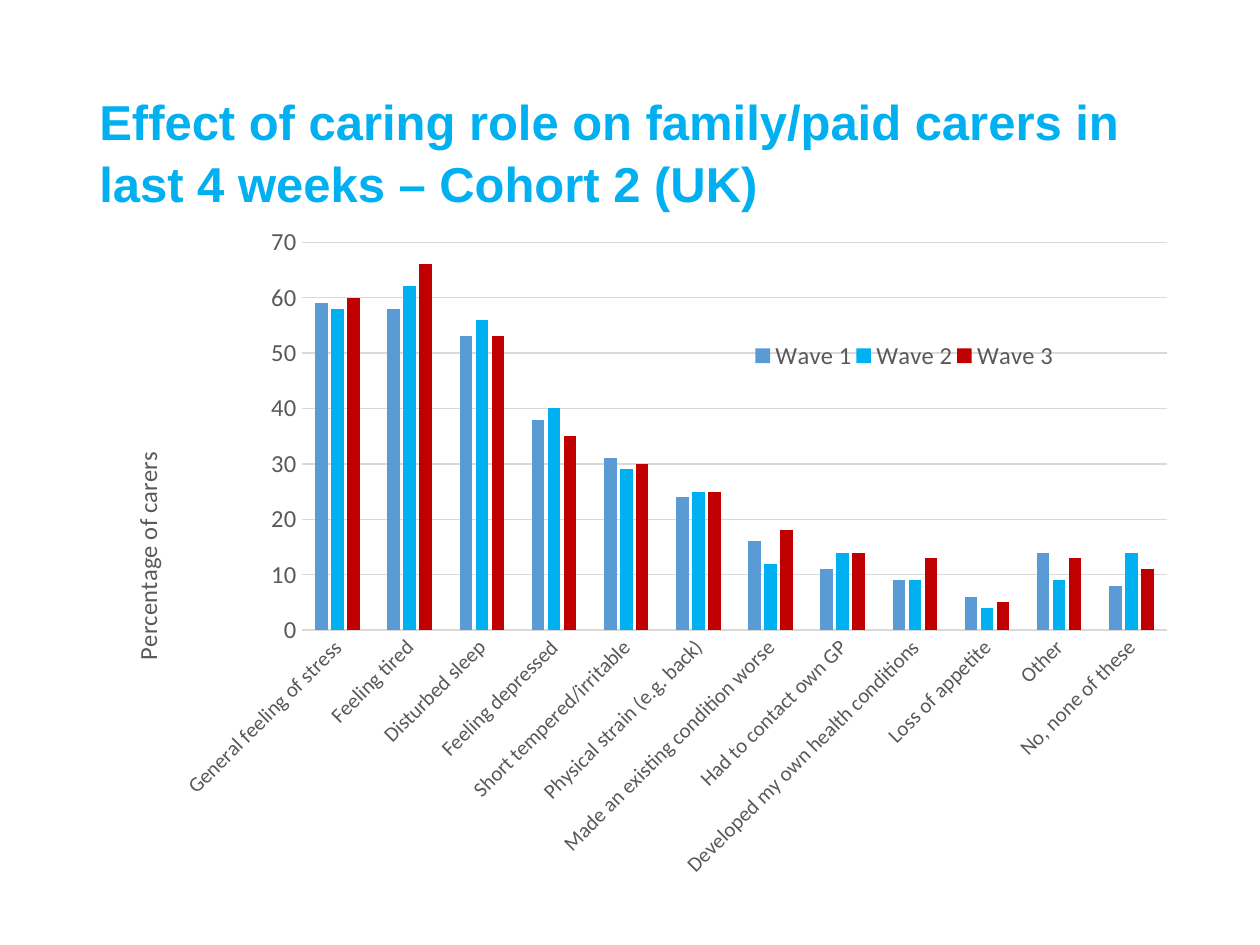
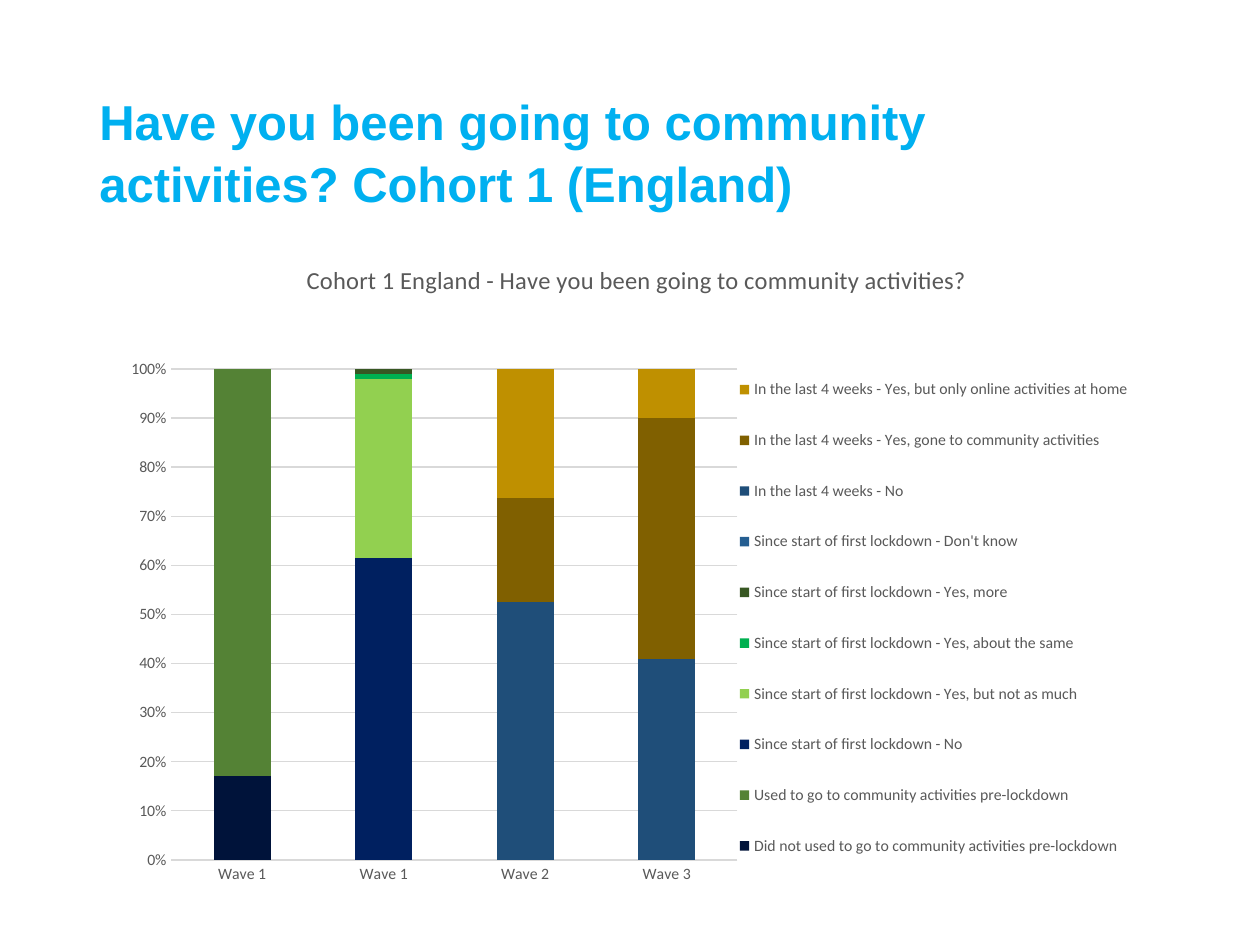
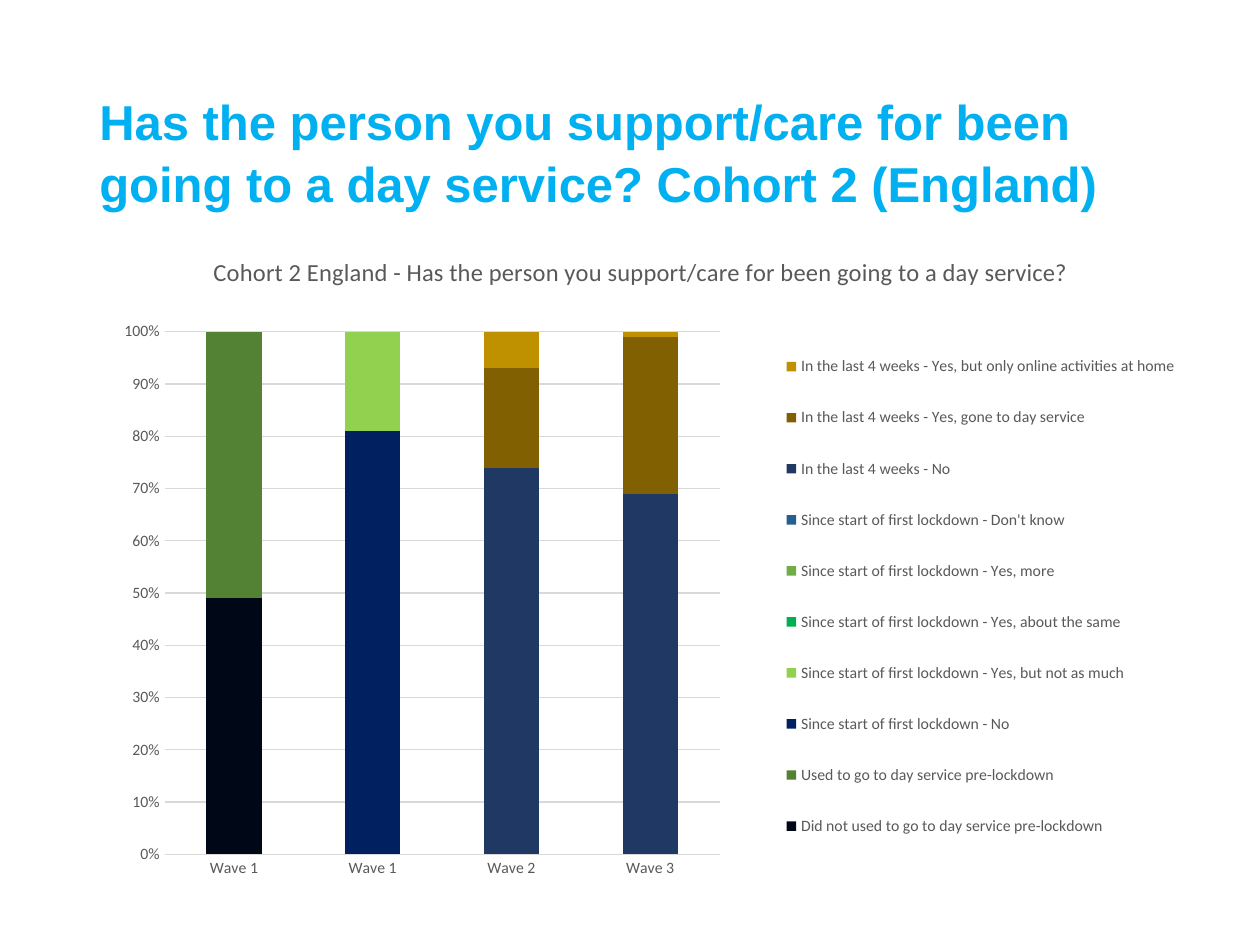
from dataclasses import dataclass

from lxml import etree
from pptx import Presentation
from pptx.chart.data import CategoryChartData
from pptx.dml.color import RGBColor
from pptx.enum.chart import XL_CHART_TYPE, XL_LEGEND_POSITION, XL_TICK_MARK
from pptx.enum.text import MSO_ANCHOR
from pptx.oxml.ns import qn
from pptx.util import Inches, Pt

CLUSTERED = XL_CHART_TYPE.COLUMN_CLUSTERED
STACKED = XL_CHART_TYPE.COLUMN_STACKED_100
BOTTOM, RIGHT = XL_LEGEND_POSITION.BOTTOM, XL_LEGEND_POSITION.RIGHT
NO_TICK = XL_TICK_MARK.NONE
MIDDLE = MSO_ANCHOR.MIDDLE


@dataclass(frozen=True)
class Theme:
    heading: str = "00B0F0"
    label: str = "595959"
    rule: str = "D9D9D9"
    heading_font: str = "Arial"
    chart_font: str = "Calibri"
    heading_size: int = 28
    chart_title_size: int = 14
    rule_width: float = 0.75


THEME = Theme()
HEADING_PLACE = (0.69, 0.44, 8.29, 1.51)

WAVES = ["Wave 1", "Wave 2", "Wave 3"]
EFFECTS = [
    ("General feeling of stress", 59, 58, 60),
    ("Feeling tired", 58, 62, 66),
    ("Disturbed sleep", 53, 56, 53),
    ("Feeling depressed", 38, 40, 35),
    ("Short tempered/irritable", 31, 29, 30),
    ("Physical strain (e.g. back)", 24, 25, 25),
    ("Made an existing condition worse", 16, 12, 18),
    ("Had to contact own GP", 11, 14, 14),
    ("Developed my own health conditions", 9, 9, 13),
    ("Loss of appetite", 6, 4, 5),
    ("Other", 14, 9, 13),
    ("No, none of these", 8, 14, 11),
]
WAVE_COLORS = ["5B9BD5", "00B0F0", "C00000"]

# Each period: its wording and the columns it fills
BEFORE = ("{} pre-lockdown", [0])
LOCKDOWN = ("Since start of first lockdown - {}", [1])
RECENT = ("In the last 4 weeks - {}", [2, 3])
ATTENDANCE_COLUMNS = ["Wave 1", "Wave 1", "Wave 2", "Wave 3"]


def attendance_series(activity, rows):
    """Name each answer and place its values in the columns of its period."""
    answers = [
        (BEFORE, f"Did not used to go to {activity}"),
        (BEFORE, f"Used to go to {activity}"),
        (LOCKDOWN, "No"),
        (LOCKDOWN, "Yes, but not as much"),
        (LOCKDOWN, "Yes, about the same"),
        (LOCKDOWN, "Yes, more"),
        (LOCKDOWN, "Don't know"),
        (RECENT, "No"),
        (RECENT, f"Yes, gone to {activity}"),
        (RECENT, "Yes, but only online activities at home"),
    ]
    series = []
    for ((wording, columns), answer), (color, *shares) in zip(answers, rows):
        filled = dict(zip(columns, shares))
        values = [filled.get(i) for i in range(len(ATTENDANCE_COLUMNS))]
        series.append((wording.format(answer), values, color))
    return series


STACKED_STYLE = dict(
    kind=STACKED, categories=ATTENDANCE_COLUMNS, gap=150, overlap=100,
    legend=RIGHT, sizes=(9, 9, 9), number_format="0%", top=1, step=0.1,
)

# Layout boxes are fractions of the chart: left, top, width, height
SLIDES = [
    dict(
        heading="Effect of caring role on family/paid carers in last 4 weeks – Cohort 2 (UK)",
        place=(0.74, 1.69, 8.7, 5.81),
        kind=CLUSTERED, categories=[row[0] for row in EFFECTS],
        series=[(wave, [row[i] for row in EFFECTS], color)
                for i, (wave, color) in enumerate(zip(WAVES, WAVE_COLORS), 1)],
        gap=219, overlap=-27, legend=BOTTOM, sizes=(12, 14, 14),
        number_format="General", top=70, step=10, label_angle=-45,
        value_title="Percentage of carers", value_title_box=(0.03, 0.32),
        plot_box=(0.19, 0.04, 0.79, 0.53),
        legend_box=(0.6, 0.17, 0.28, 0.05),
    ),
    dict(
        STACKED_STYLE,
        heading="Have you been going to community activities? Cohort 1 (England)",
        place=(0.67, 1.83, 8.64, 5.49),
        title="Cohort 1 England - Have you been going to community activities?",
        title_box=(0.2, 0.04),
        series=attendance_series("community activities", [
            ("00133A", 17), ("548235", 83), ("002060", 62), ("92D050", 37),
            ("00B050", 1), ("385723", 1), ("255E91", 0),
            ("1F4E79", 52, 41), ("806000", 21, 49), ("BF9000", 26, 10),
        ]),
        plot_box=(0.08, 0.2, 0.52, 0.71),
        legend_box=(0.6, 0.17, 0.36, 0.78),
    ),
    dict(
        STACKED_STYLE,
        heading="Has the person you support/care for been going to a day service? Cohort 2 (England)",
        place=(0.69, 1.77, 8.81, 5.39),
        title="Cohort 2 England - Has the person you support/care for been going to a day service?",
        title_box=(0.11, 0.04),
        series=attendance_series("day service", [
            ("000818", 49), ("548235", 51), ("002060", 81), ("92D050", 19),
            ("00B050", 0), ("70AD47", 0), ("255E91", 0),
            ("203864", 74, 69), ("806000", 19, 30), ("BF9000", 7, 1),
        ]),
        plot_box=(0.07, 0.16, 0.5, 0.77),
        legend_box=(0.62, 0.15, 0.37, 0.8),
    ),
]


def rgb(color):
    return RGBColor.from_string(color)


def style_font(font, size, color=THEME.label, name=THEME.chart_font, bold=False):
    font.size, font.name, font.bold = Pt(size), name, bold
    font.color.rgb = rgb(color)


def style_line(line):
    line.color.rgb = rgb(THEME.rule)
    line.width = Pt(THEME.rule_width)


def set_layout(element, box, index):
    """Pin a chart part to a box, adding its layout at the given child index."""
    layout = element.find(qn("c:layout"))
    if layout is None:
        layout = etree.Element(qn("c:layout"))
        element.insert(index, layout)
    manual = etree.SubElement(layout, qn("c:manualLayout"))
    if element.tag == qn("c:plotArea"):
        etree.SubElement(manual, qn("c:layoutTarget")).set("val", "inner")
    for side in ("xMode", "yMode"):
        etree.SubElement(manual, qn(f"c:{side}")).set("val", "edge")
    for side, share in zip("xywh", box):
        etree.SubElement(manual, qn(f"c:{side}")).set("val", str(share))


def add_heading(page, words):
    box = page.shapes.add_textbox(*map(Inches, HEADING_PLACE))
    frame = box.text_frame
    frame.word_wrap = True
    frame.vertical_anchor = MIDDLE
    frame.text = words
    para = frame.paragraphs[0]
    para.line_spacing = 1.05
    style_font(para.runs[0].font, THEME.heading_size, THEME.heading,
               THEME.heading_font, True)


def write_title(title, words, box):
    title.text_frame.text = words
    span = title.text_frame.paragraphs[0].runs[0]
    style_font(span.font, THEME.chart_title_size)
    set_layout(title._element, box, 1)


def style_axes(chart, content):
    category, value = chart.category_axis, chart.value_axis
    for axis, size in zip((category, value), content["sizes"]):
        axis.major_tick_mark = axis.minor_tick_mark = NO_TICK
        style_font(axis.tick_labels.font, size)
    style_line(category.format.line)
    value.format.line.fill.background()
    value.has_major_gridlines = True
    style_line(value.major_gridlines.format.line)
    value.minimum_scale, value.maximum_scale = 0, content["top"]
    value.major_unit = content["step"]
    value.tick_labels.number_format = content["number_format"]
    value.tick_labels.number_format_is_linked = False
    if "label_angle" in content:
        body = category._element.find(qn("c:txPr")).find(qn("a:bodyPr"))
        body.set("rot", str(content["label_angle"] * 60000))
    if "value_title" in content:
        write_title(value.axis_title, content["value_title"], content["value_title_box"])


def add_column_chart(page, content):
    data = CategoryChartData()
    data.categories = content["categories"]
    for name, values, _ in content["series"]:
        data.add_series(name, values)
    place = map(Inches, content["place"])
    chart = page.shapes.add_chart(content["kind"], *place, data).chart
    style_font(chart.font, content["sizes"][-1])

    chart.has_title = "title" in content
    if chart.has_title:
        write_title(chart.chart_title, content["title"], content["title_box"])

    plot = chart.plots[0]
    plot.gap_width, plot.overlap = content["gap"], content["overlap"]
    plot.vary_by_categories = False
    for series, (_, _, color) in zip(plot.series, content["series"]):
        series.format.fill.solid()
        series.format.fill.fore_color.rgb = rgb(color)
    style_axes(chart, content)

    chart.has_legend = True
    legend = chart.legend
    legend.position = content["legend"]
    legend.include_in_layout = False
    style_font(legend.font, content["sizes"][-1])
    set_layout(legend._element, content["legend_box"], 1)
    plot_area = chart._chartSpace.find(f".//{qn('c:plotArea')}")
    set_layout(plot_area, content["plot_box"], 0)


def main():
    deck = Presentation()
    deck.slide_width, deck.slide_height = Inches(10), Inches(7.5)
    blank = deck.slide_layouts[6]
    for content in SLIDES:
        page = deck.slides.add_slide(blank)
        add_heading(page, content["heading"])
        add_column_chart(page, content)
    deck.save("out.pptx")


if __name__ == "__main__":
    main()
